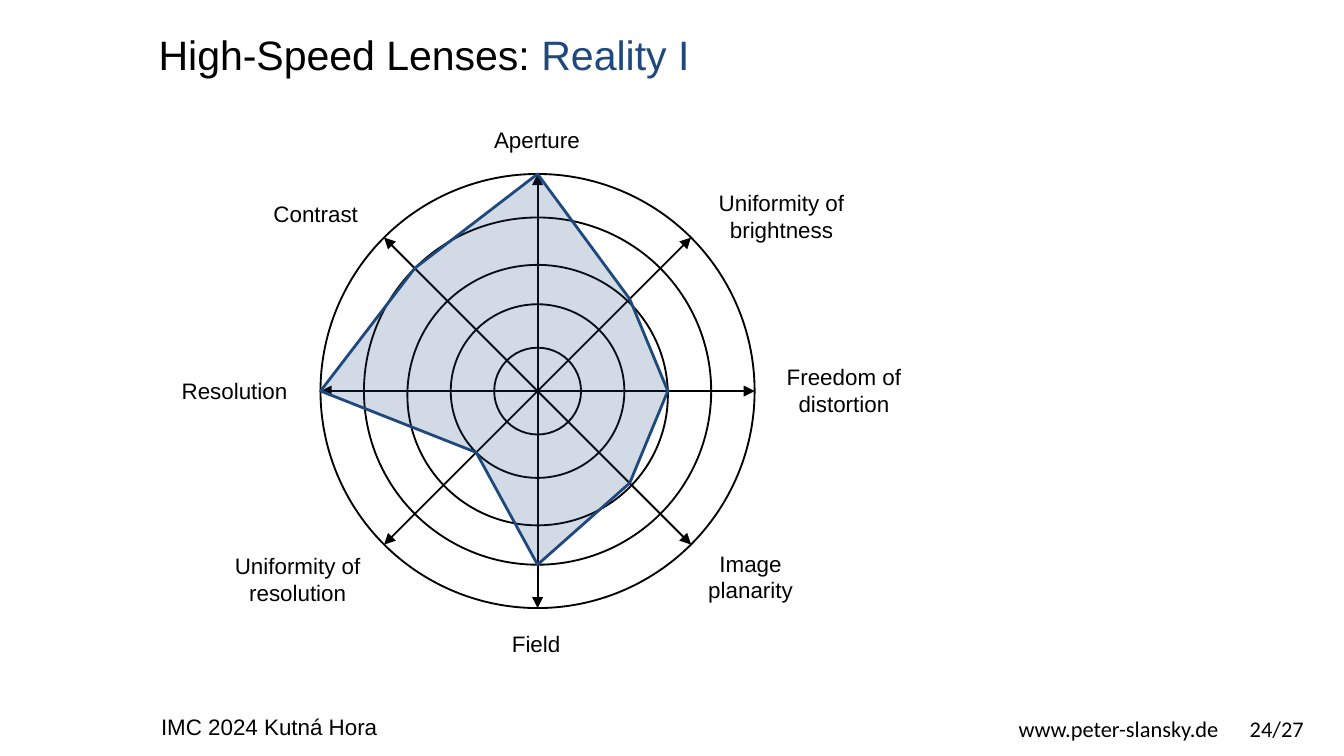
from math import cos, radians, sin

from lxml import etree
from pptx import Presentation
from pptx.dml.color import RGBColor
from pptx.enum.shapes import MSO_CONNECTOR, MSO_SHAPE
from pptx.enum.text import MSO_ANCHOR, PP_ALIGN
from pptx.oxml.ns import qn
from pptx.util import Inches, Pt

LEFT, CENTER = PP_ALIGN.LEFT, PP_ALIGN.CENTER
MIDDLE = MSO_ANCHOR.MIDDLE
OVAL, STRAIGHT = MSO_SHAPE.OVAL, MSO_CONNECTOR.STRAIGHT
BLACK, WHITE, BLUE = "000000", "FFFFFF", "1F497D"

TITLE = [("High-Speed Lenses: ", BLACK), ("Reality I", BLUE)]
EVENT = "IMC 2024 Kutná Hora"
SITE_AND_PAGE = "www.peter-slansky.de\t24/27"

# Clockwise from the top: label, score, label box (left, top, width)
CRITERIA = [
    ("Aperture", 5, (3.57, 0.89, 0.85)),
    ("Uniformity of\nbrightness", 3, (5.24, 1.36, 1.15)),
    ("Freedom of\ndistortion", 3, (5.75, 2.65, 1.06)),
    ("Image\nplanarity", 3, (5.17, 4.04, 0.83)),
    ("Field", 4, (3.71, 4.64, 0.56)),
    ("Uniformity of\nresolution", 2, (1.64, 4.06, 1.15)),
    ("Resolution", 5, (1.25, 2.76, 0.99)),
    ("Contrast", 4, (1.93, 1.44, 0.84)),
]
PAGE_WIDTH = 10
PAGE_HEIGHT = PAGE_WIDTH * 9 / 16
CENTER_X, CENTER_Y = 4.0, 2.91
RADIUS, RINGS = 3.23 / 2, 5
RING_SHIFTS = {3: 0.03}  # the third ring sits slightly low


def color(value):
    return RGBColor.from_string(value)


def radar_point(index, score):
    """Return the position of a score on one axis as lengths."""
    angle = radians(360 / len(CRITERIA) * index)
    distance = RADIUS * score / RINGS
    return (Inches(CENTER_X + distance * sin(angle)),
            Inches(CENTER_Y - distance * cos(angle)))


def add_text(text, left, top, width, height, align=LEFT, font="Arial", wrap=False):
    box = page.shapes.add_textbox(*map(Inches, (left, top, width, height)))
    frame = box.text_frame
    frame.word_wrap = wrap
    frame.vertical_anchor = MIDDLE
    frame.text = text
    for para in frame.paragraphs:
        para.alignment = align
        para.font.name = font
        para.font.size = Pt(12)
        para.font.color.rgb = color(BLACK)
    return box


def add_ring(number):
    radius = RADIUS * number / RINGS
    top = CENTER_Y - radius + RING_SHIFTS.get(number, 0)
    ring = page.shapes.add_shape(
        OVAL, Inches(CENTER_X - radius), Inches(top), Inches(2 * radius), Inches(2 * radius))
    ring.shadow.inherit = False
    ring.fill.background()
    ring.line.color.rgb = color(BLACK)
    ring.line.width = Pt(1)


def add_axis(index):
    """Draw a double-headed line through the centre."""
    start = radar_point(index, RINGS)
    end = radar_point(index + len(CRITERIA) // 2, RINGS)
    axis = page.shapes.add_connector(STRAIGHT, *start, *end)
    axis.line.color.rgb = color(BLACK)
    axis.line.width = Pt(1)
    line = axis.line._get_or_add_ln()
    for tag in ("a:headEnd", "a:tailEnd"):
        etree.SubElement(line, qn(tag), type="triangle")
    etree.SubElement(axis._element.spPr, qn("a:effectLst"))


def add_profile():
    points = [radar_point(i, score) for i, (_, score, _) in enumerate(CRITERIA)]
    builder = page.shapes.build_freeform(*points[0])
    builder.add_line_segments(points[1:], close=True)
    profile = builder.convert_to_shape()
    profile.shadow.inherit = False
    profile.fill.solid()
    profile.fill.fore_color.rgb = color(BLUE)
    fill_color = profile._element.spPr.find(qn("a:solidFill"))[0]
    etree.SubElement(fill_color, qn("a:alpha"), val="20000")
    profile.line.color.rgb = color(BLUE)
    profile.line.width = Pt(1.5)


deck = Presentation()
deck.slide_width, deck.slide_height = Inches(PAGE_WIDTH), Inches(PAGE_HEIGHT)
page = deck.slides.add_slide(deck.slide_layouts[5])
page.background.fill.solid()
page.background.fill.fore_color.rgb = color(WHITE)

title = page.shapes.title
title.left, title.top, title.width, title.height = map(Inches, (1.07, 0.16, 8.43, 0.49))
frame = title.text_frame
frame.vertical_anchor = MIDDLE
frame.margin_left = frame.margin_right = Inches(0.11)
frame.margin_top = frame.margin_bottom = Inches(0.06)
heading = frame.paragraphs[0]
heading.alignment = LEFT
heading.font.name = "Arial"
heading.font.size = Pt(22)
for text, tint in TITLE:
    span = heading.add_run()
    span.text = text
    span.font.color.rgb = color(tint)

add_text(EVENT, 1.1, 5.26, 1.83, 0.3)
footer = add_text(SITE_AND_PAGE, 7.48, 5.27, 2.32, 0.3, font="Calibri", wrap=True)
properties = footer.text_frame.paragraphs[0]._p.get_or_add_pPr()
tabs = etree.Element(qn("a:tabLst"))
etree.SubElement(tabs, qn("a:tab"), pos=str(Inches(1.72)), algn="l")
properties.insert(0, tabs)

for number in range(1, RINGS + 1):
    add_ring(number)
for index in range(len(CRITERIA) // 2):
    add_axis(index)
for label, _, (left, top, width) in CRITERIA:
    height = 0.5 if "\n" in label else 0.3
    add_text(label, left, top, width, height, CENTER)
add_profile()

deck.save("out.pptx")
